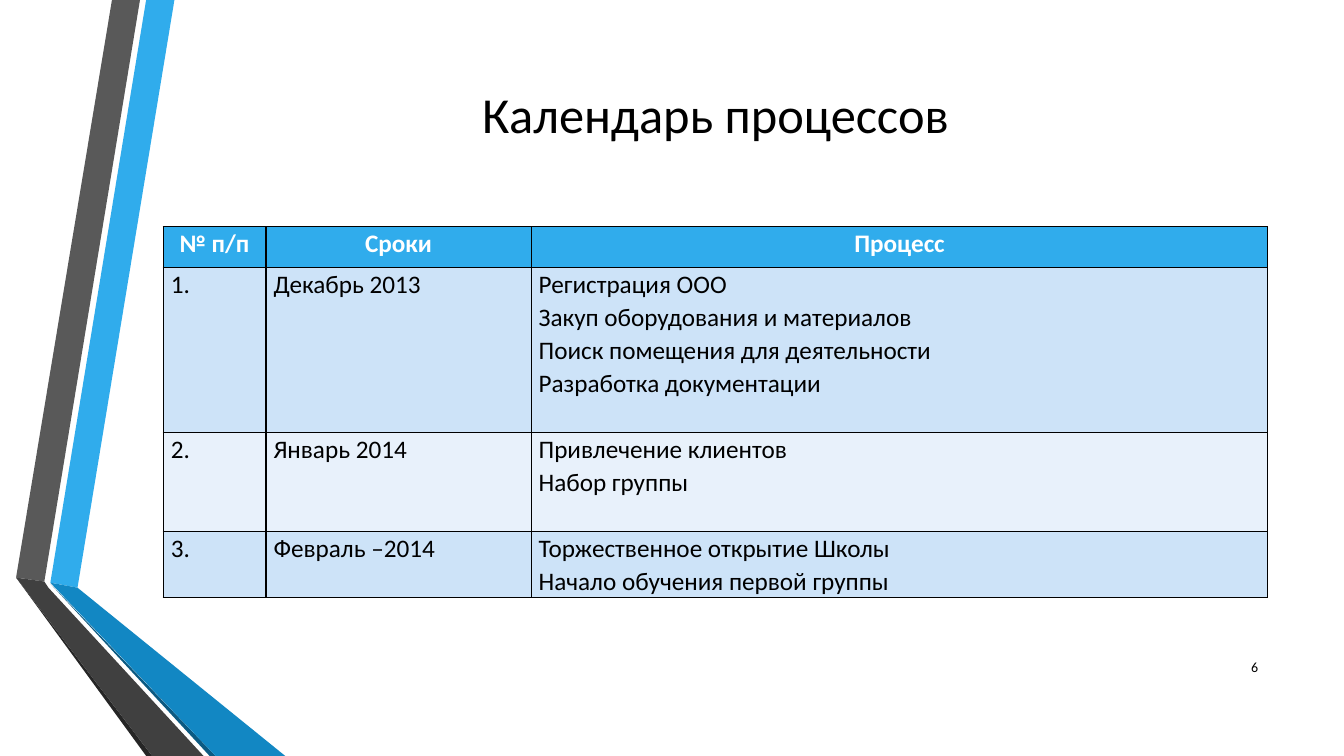
from lxml import etree
from pptx import Presentation, util as u
from pptx.dml.color import RGBColor
from pptx.enum import text
from pptx.oxml import ns

Pt = u.Pt
COLORS = {
    "black": "000000", "white": "FFFFFF", "blue": "30ACEC", "deep blue": "1287C3",
    "navy": "0C5A82", "grey": "595959", "charcoal": "404040", "dark": "262626",
    "odd row": "CDE3F8", "even row": "E8F1FB",
}


def rgb(name):
    return RGBColor.from_string(COLORS[name])


def write(frame, content, size=18, color="black", bold=False, font="Calibri",
          align=text.PP_ALIGN.LEFT, anchor=text.MSO_ANCHOR.TOP, spacing=1.0):
    """Put each line of content in its own paragraph."""
    frame.word_wrap = True
    frame.vertical_anchor = anchor
    for i, line in enumerate(content.split("\n")):
        paragraph = frame.paragraphs[0] if i == 0 else frame.add_paragraph()
        paragraph.alignment = align
        paragraph.line_spacing = spacing
        run = paragraph.add_run()
        run.text = line
        run.font.name, run.font.size, run.font.bold = font, Pt(size), bold
        run.font.color.rgb = rgb(color)


class SlideBuilder:
    def __init__(self, slide):
        self.slide = slide
        self.border = Pt(1)
        self.cell_inset = Pt(5.4)
        self.cell_spacing = 1.07

    def ribbon(self, color, points):
        start, *rest = [(Pt(x), Pt(y)) for x, y in points]
        builder = self.slide.shapes.build_freeform(*start)
        builder.add_line_segments(rest, close=True)
        shape = builder.convert_to_shape()
        shape.shadow.inherit = False
        shape.fill.solid()
        shape.fill.fore_color.rgb = rgb(color)
        shape.line.fill.background()

    def label(self, content, left, top, width, height, **style):
        box = self.slide.shapes.add_textbox(Pt(left), Pt(top), Pt(width), Pt(height))
        write(box.text_frame, content, anchor=text.MSO_ANCHOR.MIDDLE, **style)

    def cell(self, cell, content, fill, **style):
        cell.margin_left = cell.margin_right = self.cell_inset
        cell.margin_top = cell.margin_bottom = 0
        write(cell.text_frame, content, spacing=self.cell_spacing, **style)
        properties = cell._tc.get_or_add_tcPr()
        for side in ("a:lnL", "a:lnR", "a:lnT", "a:lnB"):
            line = etree.SubElement(properties, ns.qn(side), w=str(self.border))
            solid = etree.SubElement(line, ns.qn("a:solidFill"))
            etree.SubElement(solid, ns.qn("a:srgbClr"), val=COLORS["black"])
        cell.fill.solid()
        cell.fill.fore_color.rgb = rgb(fill)

    def table(self, rows, left, top, widths, heights):
        table = self.slide.shapes.add_table(
            len(rows), len(widths), Pt(left), Pt(top),
            Pt(sum(widths)), Pt(sum(heights))).table
        for column, width in zip(table.columns, widths):
            column.width = Pt(width)
        for r, (row, height) in enumerate(zip(rows, heights)):
            table.rows[r].height = Pt(height)
            if r == 0:
                fill = "blue"
                style = {"color": "white", "bold": True, "align": text.PP_ALIGN.CENTER}
            else:
                fill = "odd row" if r % 2 else "even row"
                style = {}
            for c, content in enumerate(row):
                self.cell(table.cell(r, c), content, fill, **style)


# Folded ribbons at the left edge, back to front
RIBBONS = [
    ("blue", [(36, 416.2), (55.4, 419.8), (124.6, 0), (104.4, 0)]),
    ("grey", [(100, 0), (80, 0), (11.5, 412.6), (31.7, 415.4)]),
    ("dark", [(11.5, 412.6), (104.4, 540), (108.7, 540)]),
    ("navy", [(36, 416.9), (149.8, 540), (154.1, 540)]),
    ("deep blue", [(36, 416.2), (154.1, 540), (203.8, 540), (55.4, 419.8)]),
    ("charcoal", [(145.4, 540), (34.6, 419.8), (31.7, 415.4), (11.5, 412.6),
                  (108.7, 540)]),
]

SCHEDULE = [
    ("№ п/п", "Сроки", "Процесс"),
    ("1.", "Декабрь 2013", "Регистрация ООО\nЗакуп оборудования и материалов\n"
                           "Поиск помещения для деятельности\nРазработка документации"),
    ("2.", "Январь 2014", "Привлечение клиентов\nНабор группы"),
    ("3.", "Февраль –2014", "Торжественное открытие Школы\n"
                            "Начало обучения первой группы"),
]


def main():
    deck = Presentation()
    deck.slide_width, deck.slide_height = Pt(960), Pt(540)
    page = SlideBuilder(deck.slides.add_slide(deck.slide_layouts[6]))

    for color, points in RIBBONS:
        page.ribbon(color, points)

    # Title and page number
    page.label("Календарь процессов", 116.6, 54, 789.1, 53.3,
               size=36, align=text.PP_ALIGN.CENTER)
    page.label("6", 862.6, 462.2, 43.2, 28.8, size=10, align=text.PP_ALIGN.RIGHT)

    # Calendar table
    page.table(SCHEDULE, 116.6, 162, widths=(73.4, 189.4, 526.3),
               heights=(29.3, 117.5, 70.7, 47.2))

    deck.save("out.pptx")


if __name__ == "__main__":
    main()
